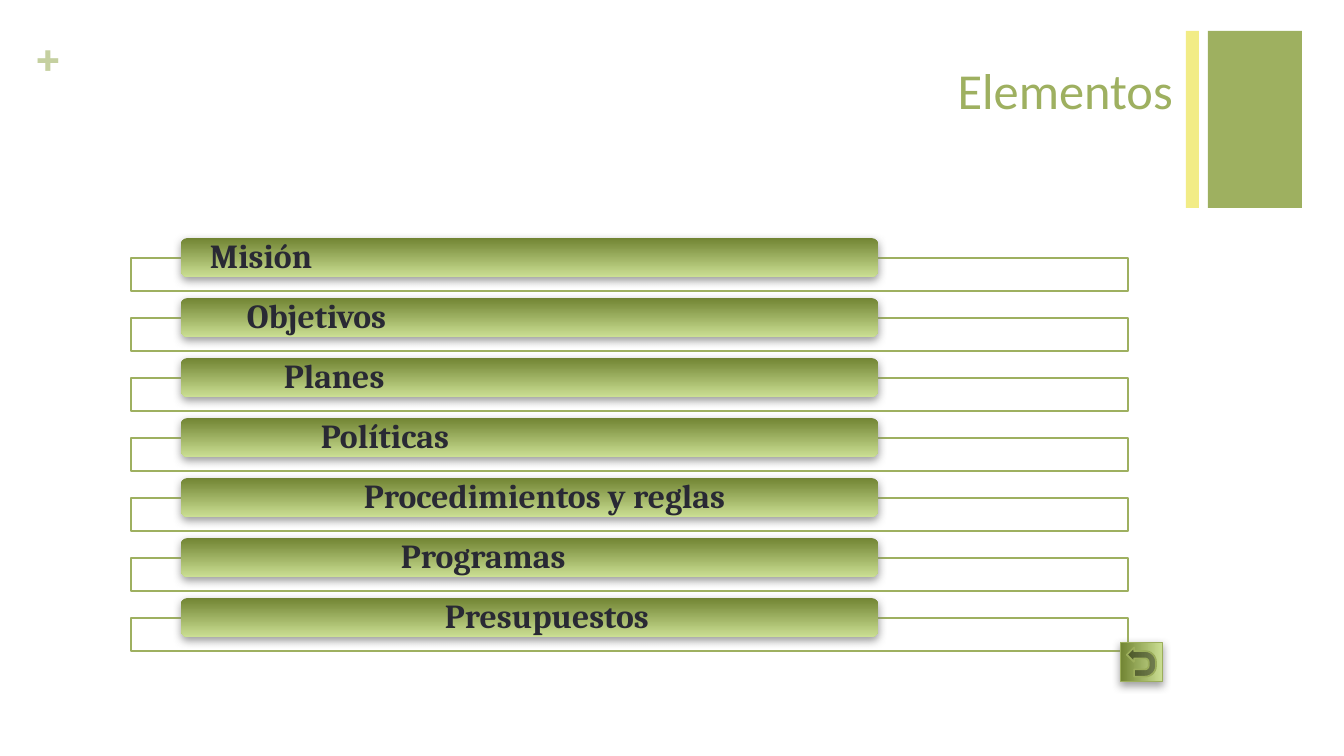
from lxml.etree import SubElement
from pptx import Presentation
from pptx.dml.color import RGBColor
from pptx.enum.shapes import MSO_SHAPE as Shape
from pptx.enum.text import MSO_ANCHOR as Anchor, PP_ALIGN as Align
from pptx.oxml.ns import qn
from pptx.util import Emu, Pt

GREEN = RGBColor(0x9E, 0xB0, 0x60)
PALE_GREEN = RGBColor(0xC5, 0xD0, 0xA0)
DARK_OLIVE = RGBColor(0x71, 0x84, 0x33)
LIGHT_OLIVE = RGBColor(0xCB, 0xDF, 0x93)
BUTTON_EDGE = RGBColor(0x9C, 0xAE, 0x5C)
YELLOW = RGBColor(0xF2, 0xEC, 0x86)
INK = RGBColor(0x29, 0x29, 0x34)
WHITE = RGBColor(0xFF, 0xFF, 0xFF)
SHADOW = RGBColor(0x80, 0x80, 0x80)

# Each element with the indent of its label, in px
ELEMENTS = [
    ("Misión", 0),
    ("Objetivos", 37),
    ("Planes", 74),
    ("Políticas", 111),
    ("Procedimientos y reglas", 154),
    ("Programas", 191),
    ("Presupuestos", 235),
]
TITLE = {"text": "Elementos", "box": (74, 53, 1111, 123), "margins": (12, 6, 12, 6),
         "align": Align.RIGHT,
         "font": {"name": "Calibri", "size": Pt(30), "bold": False}, "color": GREEN}
PLUS = {"text": "+", "box": (33, 25, 39, 60), "margins": (0, 0, 0, 0),
        "align": Align.LEFT,
        "font": {"name": "Cambria", "size": Pt(30), "bold": True}, "color": PALE_GREEN}
LABEL_FONT = {"name": "Cambria", "size": Pt(20), "bold": True}

SIZE = (1344, 756)
CORNER_BLOCKS = [((1208, 31, 94, 177), GREEN), ((1186, 31, 13, 177), YELLOW)]
FRAME = (131, 258, 997, 33)
BAR = (181, 238, 697, 39)
ROW_PITCH = 60
LABEL_MARGIN = 27
RETURN_BUTTON = (1122, 641, 39, 42)


def px(value):
    return Emu(round(value * 914400 / 121))


def shifted(box, down):
    left, top, width, height = box
    return left, top + down, width, height


def add_block(page, kind, box, fill=None, edge=None):
    """Add a shape; without a fill colour it gets the olive gradient and a shadow."""
    block = page.shapes.add_shape(kind, *map(px, box))
    block.shadow.inherit = False
    if fill is None:
        block.fill.gradient()
        block.fill.gradient_angle = 270
        for stop, color in zip(block.fill.gradient_stops, (DARK_OLIVE, LIGHT_OLIVE)):
            stop.color.rgb = color
        add_shadow(block)
    else:
        block.fill.solid()
        block.fill.fore_color.rgb = fill
    if edge is None:
        block.line.fill.background()
    else:
        block.line.color.rgb = edge
        block.line.width = Pt(1)
    return block


def add_shadow(block):
    effects = block._element.spPr.find(qn("a:effectLst"))
    outer = SubElement(effects, qn("a:outerShdw"), blurRad=str(Pt(5)),
                       dist=str(Pt(2)), dir="5400000", rotWithShape="0")
    color = SubElement(outer, qn("a:srgbClr"), val=str(SHADOW))
    SubElement(color, qn("a:alpha"), val="75000")


def write(box, text, margins, align, font, color, anchor=Anchor.TOP):
    frame = box.text_frame
    frame.word_wrap = True
    frame.vertical_anchor = anchor
    for side, margin in zip(("left", "top", "right", "bottom"), margins):
        setattr(frame, f"margin_{side}", px(margin))
    para = frame.paragraphs[0]
    para.alignment = align
    span = para.add_run()
    span.text = text
    for name, value in font.items():
        setattr(span.font, name, value)
    span.font.color.rgb = color
    return para


def main():
    deck = Presentation()
    deck.slide_width, deck.slide_height = map(px, SIZE)
    page = deck.slides.add_slide(deck.slide_layouts[6])

    for box, color in CORNER_BLOCKS:
        add_block(page, Shape.RECTANGLE, box, color)
    for item in (PLUS, TITLE):
        box = page.shapes.add_textbox(*map(px, item["box"]))
        write(box, item["text"], item["margins"], item["align"],
              item["font"], item["color"])

    for row, (name, indent) in enumerate(ELEMENTS):
        down = row * ROW_PITCH
        add_block(page, Shape.RECTANGLE, shifted(FRAME, down), WHITE, GREEN)
        bar = add_block(page, Shape.ROUNDED_RECTANGLE, shifted(BAR, down))
        para = write(bar, name, (LABEL_MARGIN + indent, 0, LABEL_MARGIN, 0),
                     Align.LEFT, LABEL_FONT, INK, Anchor.MIDDLE)
        para.line_spacing = 0.9

    button = add_block(page, Shape.ACTION_BUTTON_RETURN, RETURN_BUTTON, edge=BUTTON_EDGE)
    button.rotation = 270
    deck.save("out.pptx")


if __name__ == "__main__":
    main()
